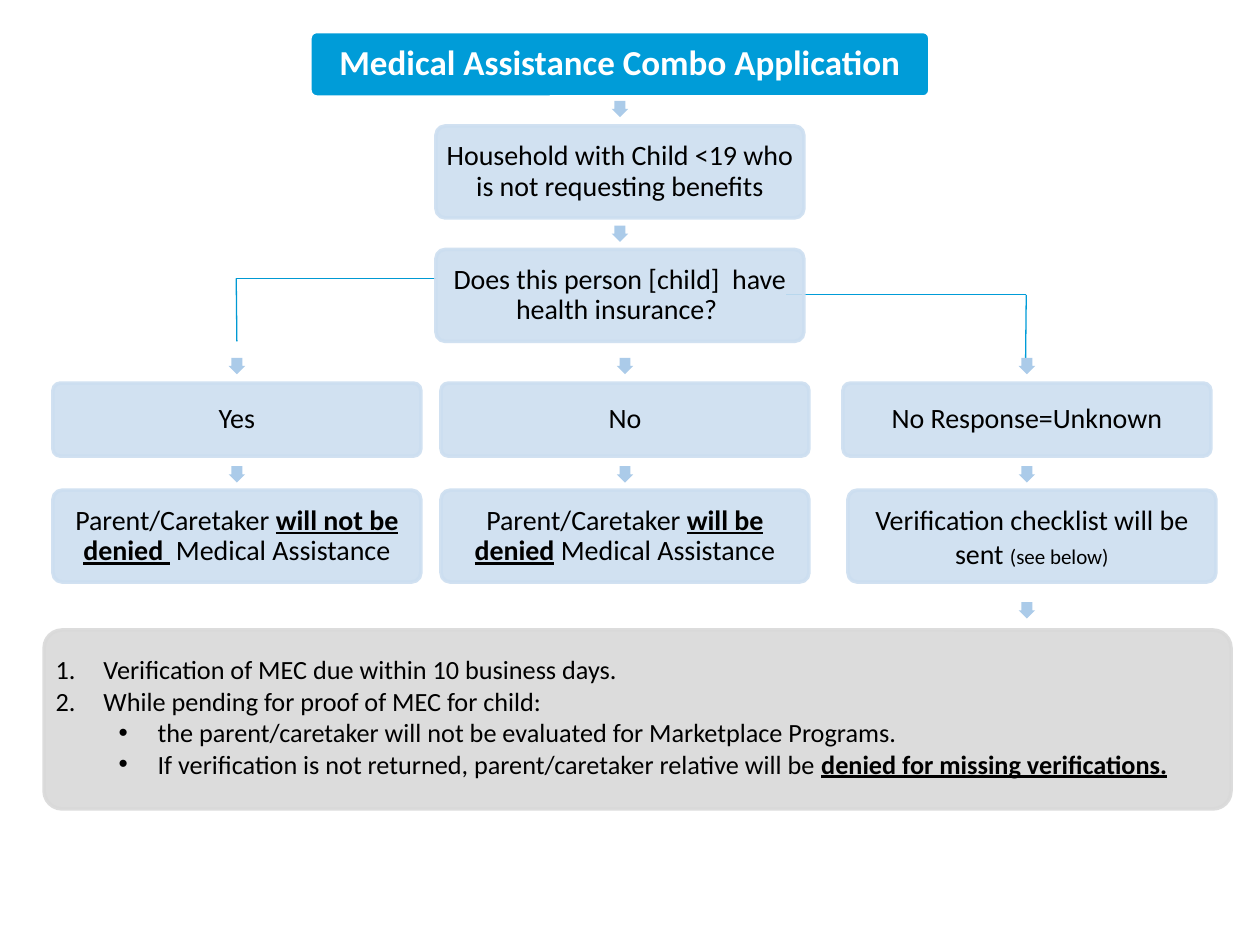
from dataclasses import dataclass
from typing import NamedTuple

from lxml import etree
from pptx import Presentation
from pptx.dml.color import RGBColor
from pptx.enum.shapes import MSO_CONNECTOR, MSO_SHAPE
from pptx.enum.text import MSO_ANCHOR, PP_ALIGN
from pptx.oxml.ns import qn
from pptx.util import Emu, Inches, Pt

ROUNDED = MSO_SHAPE.ROUNDED_RECTANGLE
ARROW = MSO_SHAPE.RIGHT_ARROW
STRAIGHT = MSO_CONNECTOR.STRAIGHT
CENTER, LEFT = PP_ALIGN.CENTER, PP_ALIGN.LEFT
MIDDLE = MSO_ANCHOR.MIDDLE

SLIDE_WIDTH, SLIDE_HEIGHT = Inches(10), Inches(7.5)
UNIT = SLIDE_WIDTH // 100  # every position is a percentage of the slide width


@dataclass(frozen=True)
class Theme:
    font: str = "Calibri"
    accent: str = "009CD8"
    branch: str = "0099D3"
    box: str = "CCDEF0"
    arrow: str = "ABCBE9"
    panel: str = "D9D9D9"
    white: str = "FFFFFF"
    black: str = "000000"
    title_size: float = 20
    box_size: float = 16
    list_size: float = 15
    note_size: float = 12
    outline: float = 2
    branch_line: float = 0.75
    opacity: int = 90


THEME = Theme()


class Area(NamedTuple):
    left: float
    top: float
    width: float
    height: float


class Run(NamedTuple):
    text: str
    size: float = THEME.box_size
    color: str = THEME.black
    bold: bool = False
    underline: bool = False


class Item(NamedTuple):
    runs: tuple[Run, ...]
    level: int = 0


class Step(NamedTuple):
    left: float
    row: tuple[float, float]
    runs: tuple[Run, ...]
    spacing: float = 0.9


BOX_WIDTH = 29.2
MAIN, YES, NO, UNKNOWN = 34.6, 4.2, 35, 66.9
CHECKLIST = UNKNOWN + 0.4
TALL, SHORT = 7.3, 5.8
HOUSEHOLD_ROW, QUESTION_ROW = (10, TALL), (19.8, TALL)
ANSWER_ROW, OUTCOME_ROW = (30.4, SHORT), (38.9, TALL)

STEPS = (
    Step(MAIN, HOUSEHOLD_ROW, (Run("Household with Child <19 who is not requesting benefits"),)),
    Step(MAIN, QUESTION_ROW, (Run("Does this person [child]  have health insurance? "),)),
    Step(YES, ANSWER_ROW, (Run("Yes"),)),
    Step(NO, ANSWER_ROW, (Run("No"),)),
    Step(UNKNOWN, ANSWER_ROW, (Run("No Response=Unknown"),)),
    Step(YES, OUTCOME_ROW, (
        Run("Parent/Caretaker "),
        Run("will not be denied ", bold=True, underline=True),
        Run(" Medical Assistance"),
    )),
    Step(NO, OUTCOME_ROW, (
        Run("Parent/Caretaker "),
        Run("will be denied", bold=True, underline=True),
        Run(" Medical Assistance"),
    )),
    Step(CHECKLIST, OUTCOME_ROW, (
        Run("Verification checklist will be sent "),
        Run("(see below)", THEME.note_size),
    ), 1),
)

ARROW_SIZE = 1.3
ARROW_TOPS = {
    8: (MAIN,),
    17.9: (MAIN,),
    28.4: (YES, NO, UNKNOWN),
    37: (YES, NO, UNKNOWN),
    47.8: (UNKNOWN,),
}

BRANCHES = (
    (THEME.branch, ((34.6, 22.1), (18.75, 22.1), (18.8, 27.1))),
    (THEME.accent, ((62.4, 23.4), (81.45, 23.4), (81.4, 28.4))),
)

ITEMS = (
    Item((Run("Verification of MEC due within 10 business days.", THEME.list_size),)),
    Item((Run("While pending for proof of MEC for child:", THEME.list_size),)),
    Item((Run("the parent/caretaker will not be evaluated for Marketplace Programs.",
              THEME.list_size),), 1),
    Item((Run("If verification is not returned, parent/caretaker relative will be ",
              THEME.list_size),
          Run("denied for missing verifications.", THEME.list_size,
              bold=True, underline=True)), 1),
)
LIST_INDENTS = ((0.38, -0.38), (0.81, -0.31))


def units(value: float) -> Emu:
    return Emu(round(value * UNIT))


def add_filled(slide, kind, area: Area, fill: str):
    shape = slide.shapes.add_shape(kind, *map(units, area))
    shape.shadow.inherit = False
    shape.fill.solid()
    shape.fill.fore_color.rgb = RGBColor.from_string(fill)
    shape.line.fill.background()
    return shape


def add_box(slide, area: Area, fill: str, outline: str, opacity: int = 100):
    shape = add_filled(slide, ROUNDED, area, fill)
    shape.adjustments[0] = 0.1
    shape.line.width = Pt(THEME.outline)
    shape.line.color.rgb = RGBColor.from_string(outline)
    if opacity < 100:
        for color in shape._element.spPr.iter(qn("a:srgbClr")):
            etree.SubElement(color, qn("a:alpha"), val=str(opacity * 1000))
    frame = shape.text_frame
    frame.word_wrap = True
    frame.vertical_anchor = MIDDLE
    frame.margin_left = frame.margin_right = Inches(0.02)
    frame.margin_top = frame.margin_bottom = Inches(0.02)
    return shape


def add_runs(paragraph, runs: tuple[Run, ...]) -> None:
    for part in runs:
        run = paragraph.add_run()
        run.text = part.text
        font = run.font
        font.name, font.size = THEME.font, Pt(part.size)
        font.bold, font.underline = part.bold, part.underline
        font.color.rgb = RGBColor.from_string(part.color)


def add_centered(shape, runs: tuple[Run, ...], spacing: float = 0.9) -> None:
    paragraph = shape.text_frame.paragraphs[0]
    paragraph.alignment = CENTER
    paragraph.line_spacing = spacing
    add_runs(paragraph, runs)


def add_arrow(slide, column: float, top: float) -> None:
    left = column + (BOX_WIDTH - ARROW_SIZE) / 2
    shape = add_filled(slide, ARROW, Area(left, top, ARROW_SIZE, ARROW_SIZE), THEME.arrow)
    shape.rotation = 90
    shape.adjustments[0], shape.adjustments[1] = 0.67, 0.5


def add_branch(slide, color: str, points) -> None:
    for start, end in zip(points, points[1:]):
        line = slide.shapes.add_connector(STRAIGHT, *map(units, (*start, *end)))
        line.line.color.rgb = RGBColor.from_string(color)
        line.line.width = Pt(THEME.branch_line)
        etree.SubElement(line._element.spPr, qn("a:effectLst"))


def add_list(shape, items: tuple[Item, ...]) -> None:
    frame = shape.text_frame
    frame.margin_left = frame.margin_right = Inches(0.05)
    frame.margin_bottom = Inches(0.07)
    for index, item in enumerate(items):
        paragraph = frame.add_paragraph() if index else frame.paragraphs[0]
        paragraph.alignment, paragraph.level = LEFT, item.level
        margin, indent = LIST_INDENTS[item.level]
        properties = paragraph._p.get_or_add_pPr()
        properties.set("marL", str(Inches(margin)))
        properties.set("indent", str(Inches(indent)))
        if item.level:
            etree.SubElement(properties, qn("a:buFont"), typeface="Arial")
            etree.SubElement(properties, qn("a:buChar"), char="•")
        else:
            etree.SubElement(properties, qn("a:buAutoNum"), type="arabicPeriod")
        add_runs(paragraph, item.runs)


def main() -> None:
    presentation = Presentation()
    presentation.slide_width, presentation.slide_height = SLIDE_WIDTH, SLIDE_HEIGHT
    slide = presentation.slides.add_slide(presentation.slide_layouts[6])
    for color, points in BRANCHES:
        add_branch(slide, color, points)
    title = add_box(slide, Area(24.6, 2.5, 49.2, 5.2), THEME.accent, THEME.white)
    add_centered(title, (Run("Medical Assistance Combo Application", THEME.title_size,
                             THEME.white, bold=True),))
    for step in STEPS:
        top, height = step.row
        box = add_box(slide, Area(step.left, top, BOX_WIDTH, height),
                      THEME.box, THEME.box, THEME.opacity)
        add_centered(box, step.runs, step.spacing)
    for top, columns in ARROW_TOPS.items():
        for column in columns:
            add_arrow(slide, column, top)
    panel = add_box(slide, Area(3.5, 50, 94.2, 14.2), THEME.panel, THEME.panel, THEME.opacity)
    add_list(panel, ITEMS)
    presentation.save("out.pptx")


if __name__ == "__main__":
    main()
